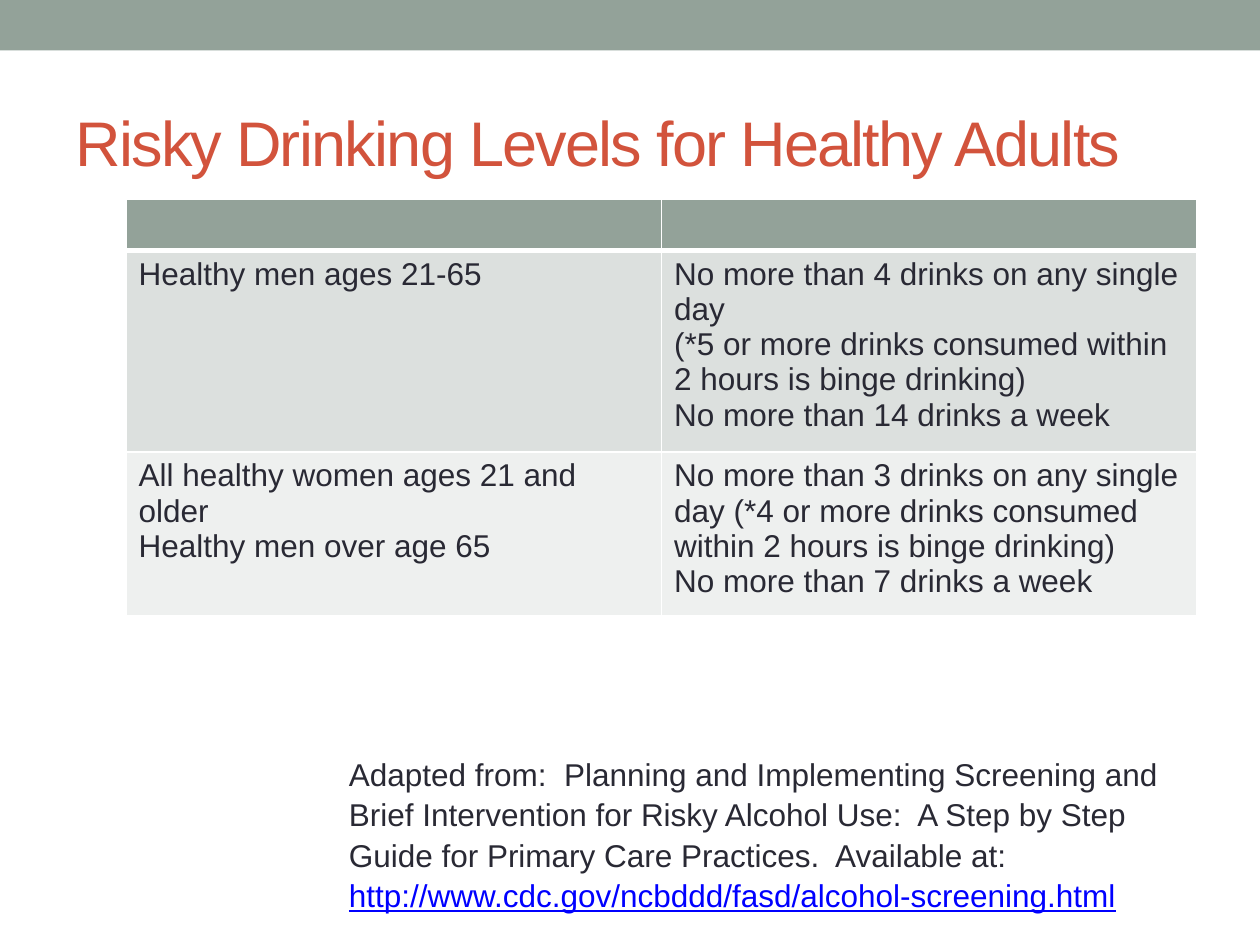
from dataclasses import dataclass

from lxml import etree
from pptx import Presentation
from pptx.dml.color import RGBColor
from pptx.enum.shapes import MSO_SHAPE
from pptx.enum.text import MSO_ANCHOR
from pptx.oxml.ns import qn
from pptx.util import Inches, Pt

RECTANGLE = MSO_SHAPE.RECTANGLE
MIDDLE = MSO_ANCHOR.MIDDLE
SLIDE_WIDTH, SLIDE_HEIGHT = Inches(10), Inches(7.5)
BLANK_LAYOUT = 6


@dataclass(frozen=True)
class Theme:
    """Colours, type sizes and spacing of the slide."""
    font: str = "Arial"
    sage: str = "93A299"
    bands: tuple = ("DCE0DE", "EEF0EF")
    rule: str = "FFFFFF"
    heading: str = "D2533C"
    body: str = "292934"
    address: str = "0000FF"
    heading_size: int = 36
    body_size: int = 18
    heading_tracking: int = -100
    source_leading: float = 1.07


THEME = Theme()

HEADING = "Risky Drinking Levels for Healthy Adults"
LIMITS = [
    ("", ""),
    (
        "Healthy men ages 21-65",
        "No more than 4 drinks on any single day\n"
        "(*5 or more drinks consumed within 2 hours is binge drinking)\n"
        "No more than 14 drinks a week",
    ),
    (
        "All healthy women ages 21 and older\nHealthy men over age 65",
        "No more than 3 drinks on any single day "
        "(*4 or more drinks consumed within 2 hours is binge drinking)\n"
        "No more than 7 drinks a week",
    ),
]
CITATION = (
    "Adapted from:  Planning and Implementing Screening and Brief Intervention "
    "for Risky Alcohol Use:  A Step by Step Guide for Primary Care Practices.  "
    "Available at: "
)
ADDRESS = "http://www.cdc.gov/ncbddd/fasd/alcohol-screening.html"


def region(left, top, width, height):
    """Turn shares of the slide's size into a box."""
    return (
        round(SLIDE_WIDTH * left),
        round(SLIDE_HEIGHT * top),
        round(SLIDE_WIDTH * width),
        round(SLIDE_HEIGHT * height),
    )


def style_runs(paragraphs, size, color):
    """Give every run the theme font, a size and a colour."""
    for paragraph in paragraphs:
        for run in paragraph.runs:
            run.font.name = THEME.font
            run.font.size = Pt(size)
            run.font.color.rgb = RGBColor.from_string(color)


def rule_cell(cell, bottom_width):
    """Draw the white rules around one table cell."""
    properties = cell._tc.get_or_add_tcPr()
    for side, width in (("L", 1), ("R", 1), ("T", 1), ("B", bottom_width)):
        line = etree.SubElement(properties, qn(f"a:ln{side}"), w=str(Pt(width)))
        fill = etree.SubElement(line, qn("a:solidFill"))
        etree.SubElement(fill, qn("a:srgbClr"), val=THEME.rule)


def add_top_band(slide, box):
    """Place the plain band along the top edge."""
    band = slide.shapes.add_shape(RECTANGLE, *box)
    band.shadow.inherit = False
    band.fill.solid()
    band.fill.fore_color.rgb = RGBColor.from_string(THEME.sage)
    band.line.fill.background()


def add_heading(slide, box):
    """Place the tightly tracked heading."""
    frame = slide.shapes.add_textbox(*box).text_frame
    frame.word_wrap = True
    frame.vertical_anchor = MIDDLE
    frame.text = HEADING
    style_runs(frame.paragraphs, THEME.heading_size, THEME.heading)
    run = frame.paragraphs[0].runs[0]
    run.font._element.set("spc", str(THEME.heading_tracking))


def add_limits_table(slide, box):
    """Place the table of drinking limits, with banded rows under a header."""
    table = slide.shapes.add_table(len(LIMITS), len(LIMITS[0]), *box).table
    fills = (THEME.sage, *THEME.bands)
    for row, (limits, fill) in enumerate(zip(LIMITS, fills)):
        for column, wording in enumerate(limits):
            cell = table.cell(row, column)
            rule_cell(cell, bottom_width=1 if row else 3)
            cell.fill.solid()
            cell.fill.fore_color.rgb = RGBColor.from_string(fill)
            cell.text_frame.text = wording
            style_runs(cell.text_frame.paragraphs, THEME.body_size, THEME.body)


def add_source(slide, box):
    """Place the citation and its underlined web address."""
    frame = slide.shapes.add_textbox(*box).text_frame
    frame.word_wrap = True
    frame.text = CITATION
    paragraph = frame.paragraphs[0]
    paragraph.line_spacing = THEME.source_leading
    address = paragraph.add_run()
    address.text = ADDRESS
    style_runs([paragraph], THEME.body_size, THEME.body)
    address.font.color.rgb = RGBColor.from_string(THEME.address)
    address.font.underline = True


def main():
    """Build the slide and save it."""
    deck = Presentation()
    deck.slide_width, deck.slide_height = SLIDE_WIDTH, SLIDE_HEIGHT
    slide = deck.slides.add_slide(deck.slide_layouts[BLANK_LAYOUT])
    add_top_band(slide, region(0, 0, 1, 0.4 / 7.5))
    add_heading(slide, region(0.05, 0.58 / 7.5, 0.9, 1.08 / 7.5))
    add_limits_table(slide, region(0.1, 1.58 / 7.5, 0.85, 1.22 / 7.5))
    add_source(slide, region(0.267, 5.92 / 7.5, 0.692, 1.62 / 7.5))
    deck.save("out.pptx")


if __name__ == "__main__":
    main()
